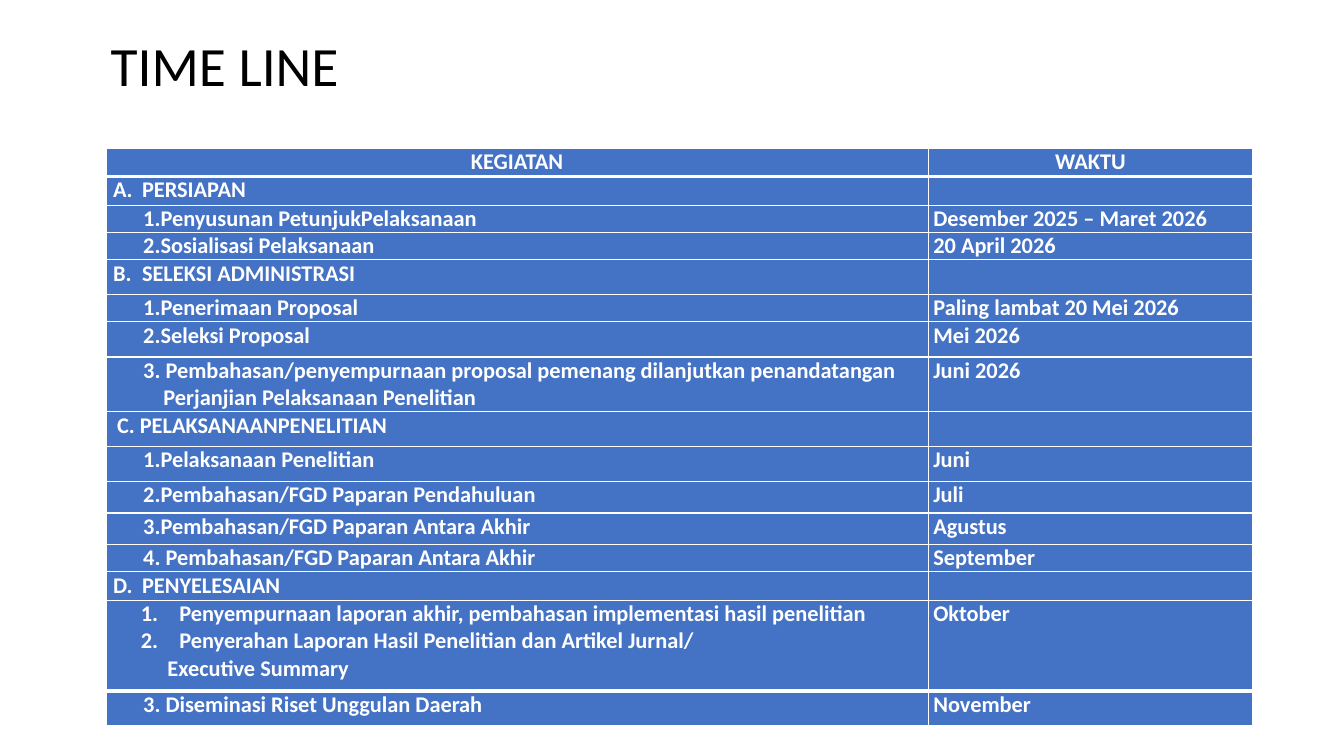
import pptx
import pptx.util
import pptx.dml.color
import pptx.enum.text
import pptx.oxml
import pptx.oxml.ns
from dataclasses import dataclass

Cm, Pt = pptx.util.Cm, pptx.util.Pt
RGB = pptx.dml.color.RGBColor.from_string
ALIGN = pptx.enum.text.PP_ALIGN
NS = pptx.oxml.ns.nsdecls("a")


@dataclass(frozen=True)
class Theme:
    font: str = "Calibri"
    title_ink: str = "000000"
    cell_ink: str = "FFFFFF"
    cell_fill: str = "4472C4"
    rule: str = "FFFFFF"
    title_size: float = 39.6
    cell_size: float = 16
    thin: float = 1
    thick: float = 3


THEME = Theme()
TITLE_FONT = {"name": THEME.font, "size": Pt(THEME.title_size), "bold": False}
CELL_FONT = {"name": THEME.font, "size": Pt(THEME.cell_size), "bold": True}
CELL_FORMAT = {"margin_left": 0, "margin_right": 0, "margin_top": 0, "margin_bottom": 0}

# Paragraph kinds: left margin and first-line indent in cm
INDENTS = {
    "header": (0, 0),
    "section": (0.91, -0.73),
    "section_c": (0.28, 0),
    "step": (0.94, 0),
    "long_step": (1.45, -0.51),
    "numbered": (1.85, -0.97),
    "continued": (1.55, 0),
    "time": (0.13, 0),
}

# Row height in cm, activity paragraphs as (kind, text), time
SCHEDULE = [
    (0.72, [("header", "KEGIATAN")], "WAKTU"),
    (0.72, [("section", "A.\tPERSIAPAN")], ""),
    (0.69, [("step", "1.Penyusunan PetunjukPelaksanaan")], "Desember 2025 – Maret 2026"),
    (0.69, [("step", "2.Sosialisasi Pelaksanaan")], "20 April 2026"),
    (0.87, [("section", "B.\tSELEKSI ADMINISTRASI")], ""),
    (0.69, [("step", "1.Penerimaan Proposal")], "Paling lambat 20 Mei 2026"),
    (0.89, [("step", "2.Seleksi Proposal")], "Mei 2026"),
    (1.38, [("long_step", "3. Pembahasan/penyempurnaan proposal pemenang dilanjutkan "
                          "penandatangan Perjanjian Pelaksanaan Penelitian")], "Juni 2026"),
    (0.87, [("section_c", "C. PELAKSANAANPENELITIAN")], ""),
    (0.89, [("step", "1.Pelaksanaan Penelitian")], "Juni"),
    (0.79, [("step", "2.Pembahasan/FGD Paparan Pendahuluan")], "Juli"),
    (0.79, [("step", "3.Pembahasan/FGD Paparan Antara Akhir")], "Agustus"),
    (0.69, [("step", "4. Pembahasan/FGD Paparan Antara Akhir")], "September"),
    (0.72, [("section", "D.\tPENYELESAIAN")], ""),
    (2.28, [("numbered", "Penyempurnaan laporan akhir, pembahasan implementasi hasil penelitian"),
            ("numbered", "Penyerahan Laporan Hasil Penelitian dan Artikel Jurnal/"),
            ("continued", "Executive Summary")], "Oktober"),
    (0.87, [("step", "3. Diseminasi Riset Unggulan Daerah")], "November"),
]
THICK_RULES = (1, len(SCHEDULE) - 1)  # below the header, above the last row
TIME_SHARE = 0.283


def apply(target, values):
    for name, value in values.items():
        setattr(target, name, value)


def write(paragraph, text, font, ink):
    run = paragraph.add_run()
    run.text = text
    apply(run.font, font)
    run.font.color.rgb = RGB(ink)


def write_cell_line(paragraph, kind, text):
    margin, indent = INDENTS[kind]
    properties = paragraph._p.get_or_add_pPr()
    properties.set("marL", str(int(Cm(margin))))
    properties.set("indent", str(int(Cm(indent))))
    if kind == "numbered":
        properties.append(pptx.oxml.parse_xml(
            f'<a:buFont {NS} typeface="+mj-lt"/>'))
        properties.append(pptx.oxml.parse_xml(
            f'<a:buAutoNum {NS} type="arabicPeriod"/>'))
    paragraph.alignment = ALIGN.CENTER if kind == "header" else ALIGN.LEFT
    if text:
        write(paragraph, text, CELL_FONT, THEME.cell_ink)
    else:
        # Keeps an empty cell as low as a line of text
        paragraph._p.append(pptx.oxml.parse_xml(
            f'<a:endParaRPr {NS} sz="{int(THEME.cell_size * 100)}"/>'))


def rule_cell(cell, top, bottom):
    widths = {"lnL": THEME.thin, "lnR": THEME.thin, "lnT": top, "lnB": bottom}
    for place, (side, width) in enumerate(widths.items()):
        cell._tc.get_or_add_tcPr().insert(place, pptx.oxml.parse_xml(
            f'<a:{side} {NS} w="{int(Pt(width))}"><a:solidFill>'
            f'<a:srgbClr val="{THEME.rule}"/></a:solidFill></a:{side}>'))


def add_title(slide, left, top, width, height):
    frame = slide.shapes.add_textbox(left, top, width, height).text_frame
    apply(frame, {"word_wrap": True,
                  "vertical_anchor": pptx.enum.text.MSO_ANCHOR.MIDDLE})
    heading = frame.paragraphs[0]
    heading.line_spacing = 0.9
    write(heading, "TIME LINE", TITLE_FONT, THEME.title_ink)


def add_schedule(slide, left, top, width, height):
    schedule = slide.shapes.add_table(len(SCHEDULE), 2, left, top, width, height).table
    apply(schedule, {"first_row": False, "horz_banding": False})
    time_width = int(width * TIME_SHARE)
    schedule.columns[0].width = width - time_width
    schedule.columns[1].width = time_width

    def rule_width(line):
        return THEME.thick if line in THICK_RULES else THEME.thin

    for index, (row_height, activity, time) in enumerate(SCHEDULE):
        schedule.rows[index].height = Cm(row_height)
        time_kind = "header" if index == 0 else "time"
        for column, lines in enumerate((activity, [(time_kind, time)])):
            cell = schedule.cell(index, column)
            apply(cell, CELL_FORMAT)
            cell.fill.solid()
            cell.fill.fore_color.rgb = RGB(THEME.cell_fill)
            rule_cell(cell, rule_width(index), rule_width(index + 1))
            frame = cell.text_frame
            for number, (kind, text) in enumerate(lines):
                line = frame.add_paragraph() if number else frame.paragraphs[0]
                write_cell_line(line, kind, text)


def main():
    deck = pptx.Presentation()
    apply(deck, {"slide_width": Cm(33.87), "slide_height": Cm(19.05)})
    slide = deck.slides.add_slide(deck.slide_layouts[6])
    add_title(slide, Cm(2.54), Cm(0.81), Cm(29.21), Cm(1.85))
    add_schedule(slide, Cm(2.67), Cm(3.73), Cm(28.9), Cm(14.5))
    deck.save("out.pptx")


if __name__ == "__main__":
    main()
